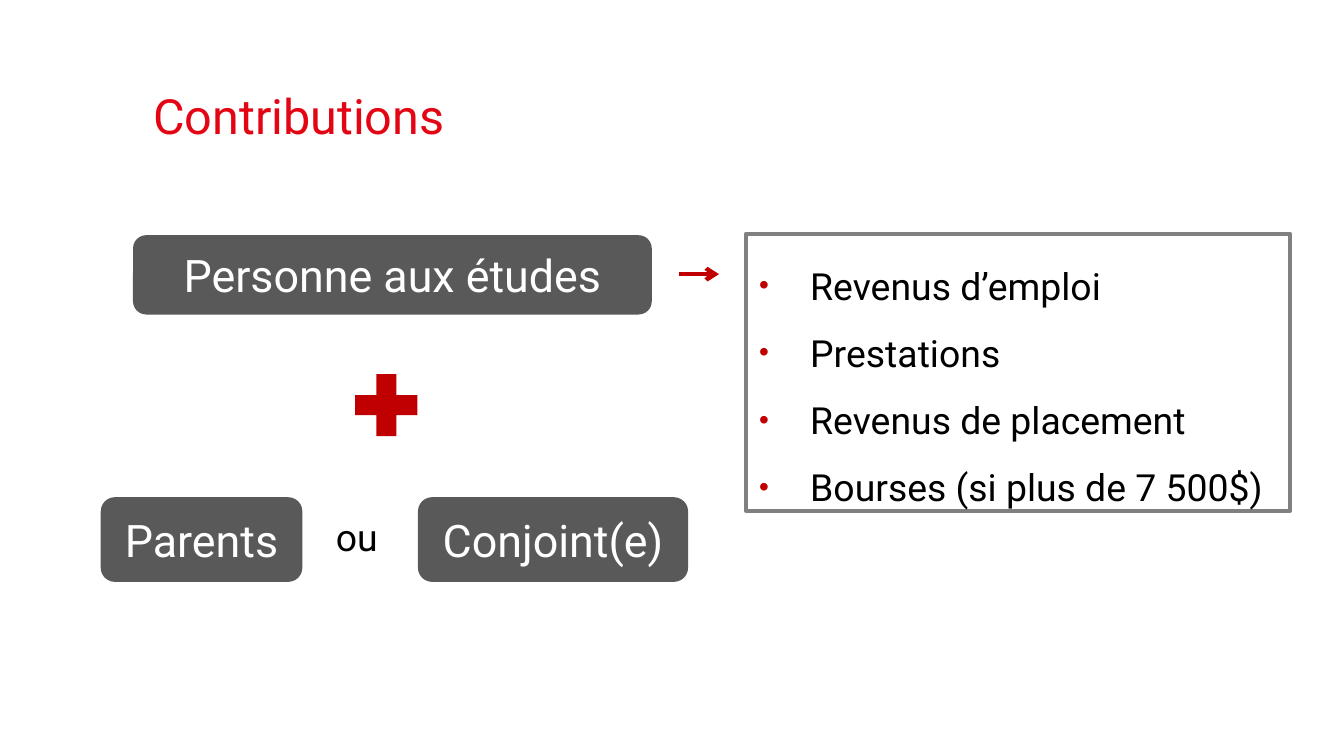
from lxml import etree
from pptx import Presentation
from pptx.dml.color import RGBColor
from pptx.enum.shapes import MSO_CONNECTOR, MSO_SHAPE
from pptx.enum.text import MSO_ANCHOR, MSO_AUTO_SIZE, PP_ALIGN
from pptx.oxml.ns import qn
from pptx.util import Inches, Pt

ROUND, PLUS, RECT = MSO_SHAPE.ROUNDED_RECTANGLE, MSO_SHAPE.MATH_PLUS, MSO_SHAPE.RECTANGLE
LINE = MSO_CONNECTOR.STRAIGHT
LEFT, CENTER = PP_ALIGN.LEFT, PP_ALIGN.CENTER
TOP, MIDDLE = MSO_ANCHOR.TOP, MSO_ANCHOR.MIDDLE
GROW = MSO_AUTO_SIZE.SHAPE_TO_FIT_TEXT
RED = "C00000"


def color(code):
    return RGBColor.from_string(code)


def write(shape, text, size, code, align=LEFT, anchor=MIDDLE):
    frame = shape.text_frame
    frame.word_wrap = True
    frame.vertical_anchor = anchor
    frame.text = text
    for para in frame.paragraphs:
        para.alignment = align
        font = para.runs[0].font
        font.name, font.size = "Roboto", Pt(size)
        font.color.rgb = color(code)
    return frame


# Widescreen slide, 16:9
deck = Presentation()
deck.slide_width, deck.slide_height = Inches(10), Inches(10 * 9 / 16)
slide = deck.slides.add_slide(deck.slide_layouts[6])
shapes = slide.shapes

# Title
title = shapes.add_textbox(Inches(1.14), Inches(0.69), Inches(8.1), Inches(0.41))
frame = write(title, "Contributions", 26, "E30513", anchor=TOP)
frame.margin_left = frame.margin_right = frame.margin_top = frame.margin_bottom = 0
frame.paragraphs[0].line_spacing = 0.9

# Contributors
people = [
    ("Personne aux études", 0.99, 1.75, 3.86, 0.59),
    ("Parents", 0.75, 3.7, 1.5, 0.63),
    ("Conjoint(e)", 3.11, 3.7, 2.01, 0.63),
]
for name, *place in people:
    card = shapes.add_shape(ROUND, *map(Inches, place))
    card.shadow.inherit = False
    card.fill.solid()
    card.fill.fore_color.rgb = color("595959")
    card.line.fill.background()
    write(card, name, 24, "FFFFFF", CENTER)

# Word between the two lower cards
word = shapes.add_textbox(Inches(2.4), Inches(3.82), Inches(0.78), Inches(0.35))
write(word, "ou", 20, "000000")

# Plus sign
plus = shapes.add_shape(PLUS, Inches(2.56), Inches(2.7), Inches(0.63), Inches(0.63))
plus.shadow.inherit = False
plus.fill.solid()
plus.fill.fore_color.rgb = color(RED)
plus.line.fill.background()

# Income list
items = ["Revenus d’emploi", "Prestations", "Revenus de placement", "Bourses (si plus de 7 500$)"]
box = shapes.add_shape(RECT, Inches(5.55), Inches(1.74), Inches(4.05), Inches(2.06))
box.shadow.inherit = False
box.fill.background()
box.line.color.rgb = color("808080")
box.line.width = Pt(2.25)
frame = write(box, "\n".join(items), 20, "000000", anchor=TOP)
frame.auto_size = GROW
for para in frame.paragraphs:
    para.line_spacing = 1.5
    props = para._p.get_or_add_pPr()
    props.set("marL", str(Inches(0.38)))
    props.set("indent", str(-Inches(0.38)))
    tint = etree.SubElement(props, qn("a:buClr"))
    etree.SubElement(tint, qn("a:srgbClr"), val=RED)
    etree.SubElement(props, qn("a:buSzPct"), val="75000")
    etree.SubElement(props, qn("a:buFont"), typeface="Arial")
    etree.SubElement(props, qn("a:buChar"), char="•")

# Arrow to the list
arrow = shapes.add_connector(LINE, Inches(5.05), Inches(2.04), Inches(5.35), Inches(2.04))
arrow.line.color.rgb = color(RED)
arrow.line.width = Pt(2.25)
etree.SubElement(arrow.line._get_or_add_ln(), qn("a:tailEnd"), type="arrow")
etree.SubElement(arrow._element.spPr, qn("a:effectLst"))

deck.save("out.pptx")
